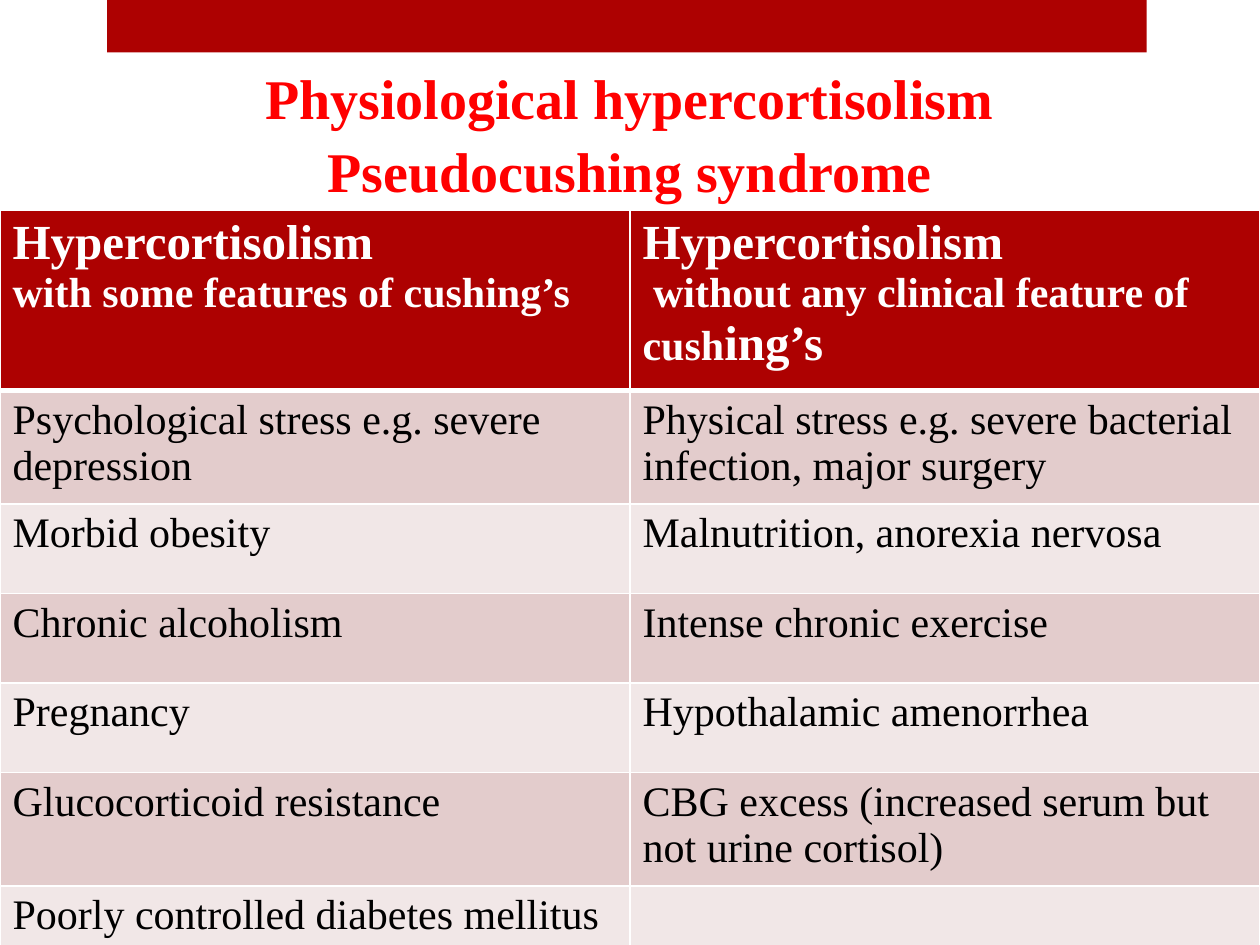
from lxml.etree import SubElement
from pptx import Presentation
from pptx.dml.color import RGBColor
from pptx.enum.shapes import MSO_SHAPE as Shape
from pptx.enum.text import MSO_ANCHOR as Anchor, PP_ALIGN as Align
from pptx.oxml.ns import qn
from pptx.util import Pt

CRIMSON = RGBColor(0xAD, 0x01, 0x01)
RED = RGBColor(0xFF, 0x00, 0x00)
WHITE = RGBColor(0xFF, 0xFF, 0xFF)
BLACK = RGBColor(0x00, 0x00, 0x00)
DARK_BAND = RGBColor(0xE3, 0xCC, 0xCC)
LIGHT_BAND = RGBColor(0xF1, 0xE7, 0xE7)

FACE = "Times New Roman"
TITLE = {"name": FACE, "size": Pt(32), "bold": True}
HEAD_LARGE = {"name": FACE, "size": Pt(28), "bold": True}
HEAD_SMALL = {"name": FACE, "size": Pt(24), "bold": True}
BODY = {"name": FACE, "size": Pt(24), "bold": False}

HEADINGS = [
    [[("Hypercortisolism", HEAD_LARGE)],
     [("with some features of cushing’s", HEAD_SMALL)]],
    [[("Hypercortisolism", HEAD_LARGE)],
     [(" without any clinical feature of cush", HEAD_SMALL), ("ing’s", HEAD_LARGE)]],
]
CAUSES = [
    ("Psychological stress e.g. severe depression",
     "Physical stress e.g. severe bacterial infection, major surgery"),
    ("Morbid obesity", "Malnutrition, anorexia nervosa"),
    ("Chronic alcoholism", "Intense chronic exercise"),
    ("Pregnancy", "Hypothalamic amenorrhea"),
    ("Glucocorticoid resistance", "CBG excess (increased serum but not urine cortisol)"),
    ("Poorly controlled diabetes mellitus", ""),
]
ROW_HEIGHTS = [90.72, 62.64, 51.12, 51.12, 51.12, 62.64, 51.12]


def add_run(paragraph, text, style, color):
    run = paragraph.add_run()
    run.text = text
    for attribute, value in style.items():
        setattr(run.font, attribute, value)
    run.font.color.rgb = color


def add_top_bar(slide, left, top, width, height):
    bar = slide.shapes.add_shape(Shape.RECTANGLE, left, top, width, height)
    bar.shadow.inherit = False
    bar.fill.solid()
    bar.fill.fore_color.rgb = CRIMSON
    bar.line.fill.background()


def add_title(slide, left, top, width, height):
    frame = slide.shapes.add_textbox(left, top, width, height).text_frame
    frame.word_wrap = True
    frame.vertical_anchor = Anchor.BOTTOM
    heading = frame.paragraphs[0]
    heading.alignment = Align.CENTER
    heading.line_spacing = 1.08
    add_run(heading, "Physiological hypercortisolism", TITLE, RED)
    heading.add_line_break()
    add_run(heading, "Pseudocushing syndrome", TITLE, RED)


def set_borders(cell, widths):
    """Draw white borders; widths maps L, R, T and B to points."""
    properties = cell._tc.get_or_add_tcPr()
    for position, (side, width) in enumerate(widths.items()):
        border = SubElement(properties, qn(f"a:ln{side}"), w=str(Pt(width)))
        fill = SubElement(border, qn("a:solidFill"))
        SubElement(fill, qn("a:srgbClr"), val=str(WHITE))
        properties.insert(position, border)


def fill_cell(cell, paragraphs, text_color, background, widths):
    cell.fill.solid()
    cell.fill.fore_color.rgb = background
    set_borders(cell, widths)
    frame = cell.text_frame
    for index, runs in enumerate(paragraphs):
        paragraph = frame.add_paragraph() if index else frame.paragraphs[0]
        for text, style in runs:
            add_run(paragraph, text, style, text_color)


def add_causes_table(slide, left, top, width):
    height = Pt(sum(ROW_HEIGHTS))
    table = slide.shapes.add_table(
        len(ROW_HEIGHTS), len(HEADINGS), left, top, width, height).table
    for row, row_height in zip(table.rows, ROW_HEIGHTS):
        row.height = Pt(row_height)
    for column, heading in enumerate(HEADINGS):
        fill_cell(table.cell(0, column), heading, WHITE, CRIMSON,
                  {"L": 1, "R": 1, "T": 1, "B": 3})
    for number, causes in enumerate(CAUSES, start=1):
        band = DARK_BAND if number % 2 else LIGHT_BAND
        widths = {"L": 1, "R": 1, "T": 3 if number == 1 else 1, "B": 1}
        for column, cause in enumerate(causes):
            paragraphs = [[(cause, BODY)]] if cause else []
            fill_cell(table.cell(number, column), paragraphs, BLACK, band, widths)


def main():
    deck = Presentation()
    deck.slide_width, deck.slide_height = Pt(720), Pt(540)
    slide = deck.slides.add_slide(deck.slide_layouts[6])
    add_top_bar(slide, Pt(61.2), Pt(0), Pt(594), Pt(30))
    add_title(slide, Pt(0), Pt(42), Pt(720), Pt(78))
    add_causes_table(slide, Pt(0), Pt(120), Pt(720))
    deck.save("out.pptx")


if __name__ == "__main__":
    main()
